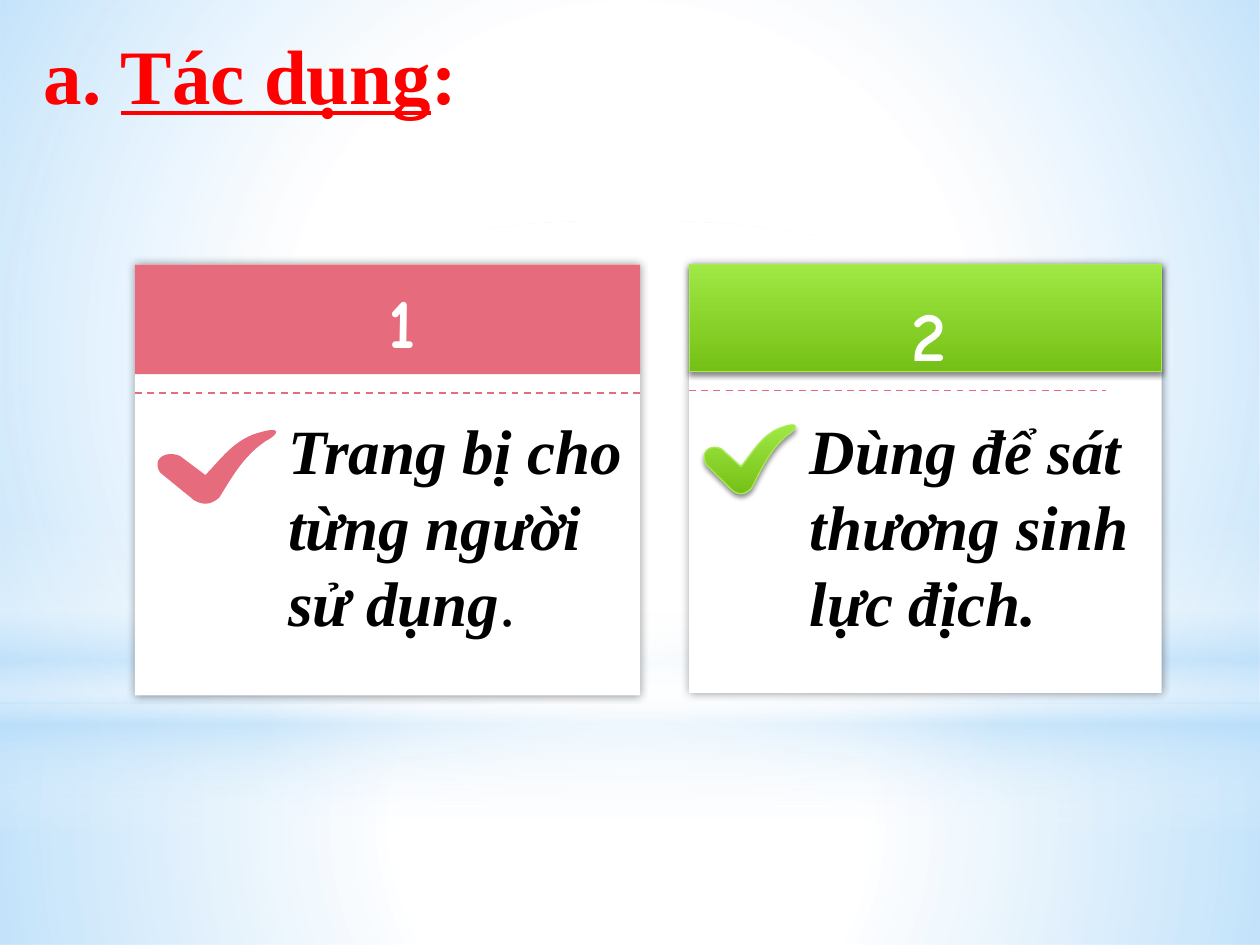
"""Build a slide with two check-marked cards on a soft sky-blue background."""
import dataclasses
import typing

import lxml.etree
import pptx
import pptx.dml.color
import pptx.enum.dml
import pptx.enum.shapes
import pptx.enum.text
import pptx.oxml.ns
import pptx.util

RGBColor = pptx.dml.color.RGBColor
Kind = pptx.enum.shapes.MSO_SHAPE
qn = pptx.oxml.ns.qn

WHITE = RGBColor(0xFF, 0xFF, 0xFF)
BLACK = RGBColor(0, 0, 0)
RED = RGBColor(0xFF, 0, 0)
SKY = RGBColor(0xB4, 0xDC, 0xFA)
PINK = RGBColor(0xE6, 0x6C, 0x7D)
LIME = RGBColor(0xA0, 0xE8, 0x44)
GREEN = RGBColor(0x75, 0xC0, 0x16)
EDGE = RGBColor(0xA7, 0xEA, 0x52)

COLUMNS, ROWS = 100, 75
CELL = pptx.util.Inches(0.1)
SERIF, ROUNDED = "Times New Roman", "Comic Neue"
CURVE_STEPS = 12
CHECK_SIZE = (94, 59)
CHECK_START = (38, 36)
CHECK_SEGMENTS = (
    ((18, 21),),
    ((7, 16), (-5, 23), (2, 34)),
    ((29, 56),),
    ((36, 60), (42, 60), (49, 54)),
    ((59, 38), (68, 21), (86, 9)),
    ((96, 4), (99, -3), (82, 2)),
    ((61, 7), (50, 24), (38, 36)),
)


class Box(typing.NamedTuple):
    """A rectangle in grid columns and rows."""
    left: float
    top: float
    width: float
    height: float

    def lengths(self) -> list[int]:
        return [round(value * CELL) for value in self]


class Stop(typing.NamedTuple):
    """A gradient stop with position and opacity in percent."""
    position: int
    color: RGBColor
    opacity: int = 100


class Shadow(typing.NamedTuple):
    """A black shadow with opacity in percent and lengths in points."""
    opacity: int
    blur: float
    distance: float = 0
    angle: int = 0


@dataclasses.dataclass
class Gradient:
    """A linear gradient, or a centred circular one without an angle."""
    stops: list[Stop]
    angle: typing.Optional[int] = None


@dataclasses.dataclass
class Style:
    """Fill, outline and shadow of a shape."""
    fill: typing.Union[RGBColor, Gradient]
    edge: typing.Optional[RGBColor] = None
    shadow: typing.Optional[Shadow] = None


@dataclasses.dataclass
class Span:
    """A piece of text with its own emphasis."""
    text: str
    bold: bool = True
    italic: bool = False
    underline: bool = False


@dataclasses.dataclass
class Card:
    """A numbered card with a header, a check mark and a message."""
    number: str
    panel: Box
    header_height: float
    rule_width: float
    check: Box
    message_box: Box
    number_box: Box
    accent: Style
    message: list[Span]


def add_color(parent, color: RGBColor, opacity: int) -> None:
    node = lxml.etree.SubElement(parent, qn("a:srgbClr"), val=str(color))
    lxml.etree.SubElement(node, qn("a:alpha"), val=str(opacity * 1000))


def paint_gradient(shape, gradient: Gradient) -> None:
    shape.fill.solid()
    properties = shape.element.spPr
    node = lxml.etree.Element(qn("a:gradFill"), rotWithShape="1")
    stops = lxml.etree.SubElement(node, qn("a:gsLst"))
    for stop in gradient.stops:
        mark = lxml.etree.SubElement(stops, qn("a:gs"), pos=str(stop.position * 1000))
        add_color(mark, stop.color, stop.opacity)
    if gradient.angle is None:
        circle = lxml.etree.SubElement(node, qn("a:path"), {"path": "circle"})
        sides = dict.fromkeys("ltrb", "50000")
        lxml.etree.SubElement(circle, qn("a:fillToRect"), sides)
    else:
        lxml.etree.SubElement(node, qn("a:lin"), ang=str(gradient.angle * 60000), scaled="0")
    properties.replace(properties.find(qn("a:solidFill")), node)


def apply_style(shape, style: Style) -> None:
    if isinstance(style.fill, Gradient):
        paint_gradient(shape, style.fill)
    else:
        shape.fill.solid()
        shape.fill.fore_color.rgb = style.fill
    if style.edge is None:
        shape.line.fill.background()
    else:
        shape.line.color.rgb = style.edge
        shape.line.width = pptx.util.Pt(0.75)
    shape.shadow.inherit = False
    if style.shadow:
        effects = shape.element.spPr.find(qn("a:effectLst"))
        node = lxml.etree.SubElement(
            effects, qn("a:outerShdw"),
            blurRad=str(pptx.util.Pt(style.shadow.blur)),
            dist=str(pptx.util.Pt(style.shadow.distance)),
            dir=str(style.shadow.angle * 60000), algn="ctr", rotWithShape="0")
        add_color(node, BLACK, style.shadow.opacity)


def add_block(shapes, box: Box, style: Style, kind=Kind.RECTANGLE) -> None:
    apply_style(shapes.add_shape(kind, *box.lengths()), style)


def add_rule(shapes, left: float, top: float, width: float) -> None:
    x, y, length, _ = Box(left, top, width, 0).lengths()
    rule = shapes.add_connector(pptx.enum.shapes.MSO_CONNECTOR.STRAIGHT, x, y, x + length, y)
    rule.line.color.rgb = PINK
    rule.line.width = pptx.util.Pt(1)
    rule.line.dash_style = pptx.enum.dml.MSO_LINE.DASH
    lxml.etree.SubElement(rule.element.spPr, qn("a:effectLst"))


def check_outline() -> list[tuple[float, float]]:
    points = [CHECK_START]
    for segment in CHECK_SEGMENTS:
        if len(segment) == 1:
            points.append(segment[0])
            continue
        controls = (points[-1], *segment)
        for step in range(1, CURVE_STEPS + 1):
            t = step / CURVE_STEPS
            weights = ((1 - t) ** 3, 3 * t * (1 - t) ** 2, 3 * t * t * (1 - t), t ** 3)
            points.append(tuple(sum(w * c[axis] for w, c in zip(weights, controls))
                                for axis in (0, 1)))
    return points


def add_check(shapes, box: Box, style: Style) -> None:
    left, top, width, height = box.lengths()
    points = [(left + x * width / CHECK_SIZE[0], top + y * height / CHECK_SIZE[1])
              for x, y in check_outline()]
    builder = shapes.build_freeform(*points[0])
    builder.add_line_segments(points[1:], close=True)
    apply_style(builder.convert_to_shape(), style)


def add_text(shapes, box: Box, spans: list[Span], size: int, color: RGBColor,
             font: str = SERIF, centred: bool = False) -> None:
    frame = shapes.add_textbox(*box.lengths()).text_frame
    frame.word_wrap = not centred
    frame.auto_size = pptx.enum.text.MSO_AUTO_SIZE.SHAPE_TO_FIT_TEXT
    para = frame.paragraphs[0]
    if centred:
        frame.vertical_anchor = pptx.enum.text.MSO_ANCHOR.MIDDLE
        para.alignment = pptx.enum.text.PP_ALIGN.CENTER
    para.font.name, para.font.size = font, pptx.util.Pt(size)
    para.font.color.rgb = color
    for span in spans:
        run = para.add_run()
        run.text = span.text
        run.font.bold, run.font.italic = span.bold, span.italic
        run.font.underline = span.underline


def add_card(shapes, card: Card) -> None:
    group = shapes.add_group_shape().shapes
    panel = card.panel
    add_block(group, panel, Style(WHITE, shadow=Shadow(40, 5)))
    add_block(group, panel._replace(height=card.header_height), card.accent)
    add_rule(group, panel.left, panel.top + card.header_height + 1.5, card.rule_width)
    add_check(shapes, card.check, card.accent)
    add_text(shapes, card.message_box, card.message, 36, BLACK)
    add_text(shapes, card.number_box, [Span(card.number)], 40, WHITE, ROUNDED, centred=True)


BACKDROP = [
    (Box(0, 55.8, COLUMNS, 19.2), Kind.RECTANGLE,
     Gradient([Stop(0, WHITE, 91), Stop(37, WHITE, 76), Stop(100, SKY, 79)])),
    (Box(0, 0, COLUMNS, 55.8), Kind.RECTANGLE,
     Gradient([Stop(0, WHITE, 89), Stop(48, WHITE, 62), Stop(100, SKY, 79)])),
    (Box(0, 41.2, COLUMNS, 25), Kind.RECTANGLE,
     Gradient([Stop(0, WHITE, 0), Stop(29, WHITE, 30), Stop(45, SKY, 40),
               Stop(55, WHITE, 26), Stop(65, SKY, 60), Stop(100, WHITE, 0)], 90)),
    (Box(0, 17.5, COLUMNS, 55.8), Kind.OVAL,
     Gradient([Stop(0, WHITE), Stop(56, WHITE, 0)])),
]
GLOSSY = Style(Gradient([Stop(0, LIME), Stop(100, GREEN)], 90), EDGE, Shadow(45, 3.1, 1.8, 90))
CARDS = [
    Card("1", Box(10.7, 21, 40.1, 34.2), 8.7, 40.1, Box(12.5, 34.1, 9.4, 5.9),
         Box(21.9, 32.2, 28.9, 19.9), Box(29.2, 21.6, 5.4, 7.7), Style(PINK),
         [Span("Trang bị cho từng người sử dụng", italic=True), Span(".", bold=False)]),
    Card("2", Box(54.7, 21, 37.5, 34), 8.5, 33.1, Box(55.9, 33.7, 7.2, 5.5),
         Box(63.3, 32.2, 31.7, 19.2), Box(71, 22.6, 5.4, 7.7), GLOSSY,
         [Span("Dùng để sát thương sinh lực địch.", italic=True)]),
]
TITLE = [Span("a. "), Span("Tác dụng", underline=True), Span(":")]


def main() -> None:
    deck = pptx.Presentation()
    deck.slide_width, deck.slide_height = COLUMNS * CELL, ROWS * CELL
    page = deck.slides.add_slide(deck.slide_layouts[6])
    for box, kind, gradient in BACKDROP:
        add_block(page.shapes, box, Style(gradient), kind)
    for card in CARDS:
        add_card(page.shapes, card)
    add_text(page.shapes, Box(2.5, 1.7, 97.5, 8.4), TITLE, 44, RED)
    deck.save("out.pptx")


if __name__ == "__main__":
    main()
